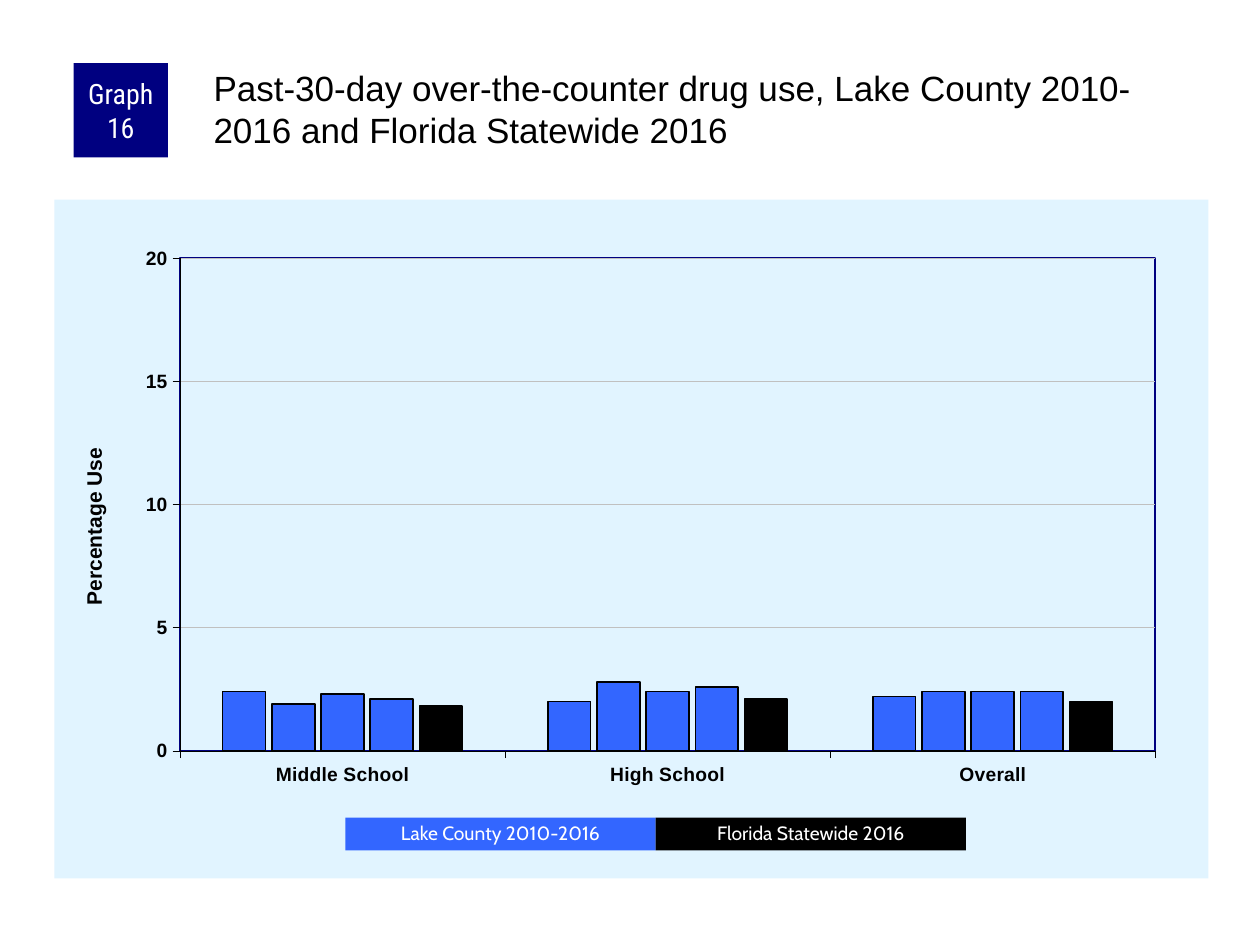
from lxml import etree
from pptx import Presentation
from pptx.chart.data import CategoryChartData
from pptx.dml.color import RGBColor
from pptx.enum.chart import XL_CHART_TYPE, XL_TICK_MARK
from pptx.enum.shapes import MSO_SHAPE
from pptx.enum.text import MSO_ANCHOR, MSO_AUTO_SIZE, PP_ALIGN
from pptx.oxml import parse_xml
from pptx.oxml.ns import nsdecls, qn
from pptx.util import Pt

COLUMNS = XL_CHART_TYPE.COLUMN_CLUSTERED
TICK_OUT, TICK_NONE = XL_TICK_MARK.OUTSIDE, XL_TICK_MARK.NONE
RECTANGLE = MSO_SHAPE.RECTANGLE
TOP, MIDDLE = MSO_ANCHOR.TOP, MSO_ANCHOR.MIDDLE
LEFT, CENTER = PP_ALIGN.LEFT, PP_ALIGN.CENTER
NO_AUTOFIT = MSO_AUTO_SIZE.NONE

BLACK, WHITE, NAVY, BLUE = "000000", "FFFFFF", "000080", "3366FF"
PALE_BLUE, GRAY = "E1F4FF", "C0C0C0"

CATEGORIES = ["Middle School", "High School", "Overall"]
# Name, values, colour, outline width
SERIES = [
    ("Series 1", (2.4, 2, 2.2), BLUE, 0.75),
    ("Series 2", (1.9, 2.8, 2.4), BLUE, 1),
    ("Series 3", (2.3, 2.4, 2.4), BLUE, 1),
    ("Series 4", (2.1, 2.6, 2.4), BLUE, 1),
    ("Series 5", (1.8, 2.1, 2), BLACK, 1),
]
LEGEND = [("Lake County 2010-2016", BLUE), ("Florida Statewide 2016", BLACK)]


def color(hex_value):
    return RGBColor.from_string(hex_value)


def style_font(font, name, size, hex_value, bold=False):
    font.name, font.size, font.bold = name, Pt(size), bold
    font.color.rgb = color(hex_value)


def style_line(line, hex_value, width):
    line.color.rgb = color(hex_value)
    line.width = Pt(width)


def write_text(frame, text, font_name, size, hex_value, alignment, anchor, margins):
    frame.word_wrap = True
    frame.auto_size = NO_AUTOFIT
    frame.vertical_anchor = anchor
    (frame.margin_left, frame.margin_top,
     frame.margin_right, frame.margin_bottom) = map(Pt, margins)
    paragraph = frame.paragraphs[0]
    paragraph.alignment = alignment
    run = paragraph.add_run()
    run.text = text
    style_font(run.font, font_name, size, hex_value)
    return paragraph


def add_box(slide, bounds, fill, text, font_name, size, margins):
    shape = slide.shapes.add_shape(RECTANGLE, *map(Pt, bounds))
    shape.shadow.inherit = False
    shape.fill.solid()
    shape.fill.fore_color.rgb = color(fill)
    shape.line.fill.background()
    return write_text(shape.text_frame, text, font_name, size, WHITE,
                      CENTER, MIDDLE, margins)


def set_layout(element, **settings):
    """Place a chart part by fractions of the chart area."""
    layout = element.find(qn("c:layout"))
    if layout is None:
        layout = etree.Element(qn("c:layout"))
        element.insert(0, layout)
    manual = etree.SubElement(layout, qn("c:manualLayout"))
    for tag, value in settings.items():
        etree.SubElement(manual, qn(f"c:{tag}")).set("val", str(value))


def area_properties(fill, line):
    return parse_xml(f"<c:spPr {nsdecls('c', 'a')}>{fill}{line}</c:spPr>")


def solid_fill(hex_value):
    return f'<a:solidFill><a:srgbClr val="{hex_value}"/></a:solidFill>'


def style_axis(axis):
    axis.major_tick_mark, axis.minor_tick_mark = TICK_OUT, TICK_NONE
    style_font(axis.tick_labels.font, "Arial", 11, BLACK, True)
    style_line(axis.format.line, BLACK, 0.25)


def style_value_axis(axis):
    style_axis(axis)
    axis.minimum_scale, axis.maximum_scale, axis.major_unit = 0, 20, 5
    axis.tick_labels.number_format = "0"
    axis.tick_labels.number_format_is_linked = False
    axis.has_major_gridlines = True
    style_line(axis.major_gridlines.format.line, GRAY, 0.25)
    title = axis.axis_title
    run = title.text_frame.paragraphs[0].add_run()
    run.text = "Percentage Use"
    style_font(run.font, "Arial", 12, BLACK, True)
    title_element = axis._element.find(qn("c:title"))
    set_layout(title_element, xMode="edge", yMode="edge", x=0.02, y=0.36)


def add_usage_chart(slide, bounds):
    data = CategoryChartData()
    data.categories = CATEGORIES
    for name, values, _, _ in SERIES:
        data.add_series(name, values)
    chart = slide.shapes.add_chart(COLUMNS, *map(Pt, bounds), data).chart
    chart.has_legend = chart.has_title = False
    style_font(chart.font, "Arial", 8, BLACK)

    # Columns
    plot = chart.plots[0]
    plot.gap_width, plot.overlap, plot.vary_by_categories = 200, -15, False
    for series, (_, _, fill, width) in zip(plot.series, SERIES):
        series.invert_if_negative = False
        series.format.fill.solid()
        series.format.fill.fore_color.rgb = color(fill)
        style_line(series.format.line, BLACK, width)

    style_axis(chart.category_axis)
    style_value_axis(chart.value_axis)

    # Chart background and plot frame
    no_line = "<a:ln><a:noFill/></a:ln>"
    frame_line = f'<a:ln w="{Pt(1)}">{solid_fill(NAVY)}</a:ln>'
    chart_element = chart._chartSpace.find(qn("c:chart"))
    chart_element.addnext(area_properties(solid_fill(PALE_BLUE), no_line))
    plot_area = chart_element.find(qn("c:plotArea"))
    plot_area.append(area_properties("<a:noFill/>", frame_line))
    set_layout(plot_area, layoutTarget="inner", xMode="edge", yMode="edge",
               x=0.109, y=0.086, w=0.845, h=0.726)


def add_title(slide, bounds, text):
    title = slide.shapes.title
    title.left, title.top, title.width, title.height = map(Pt, bounds)
    write_text(title.text_frame, text, "Arial", 20, BLACK, LEFT, TOP, (2, 2, 0, 0))


def add_legend(slide, left, top, width, height):
    for index, (text, fill) in enumerate(LEGEND):
        bounds = (left + index * width, top, width, height)
        paragraph = add_box(slide, bounds, fill, text, "Cabin", 11,
                            (7.2, 3.6, 7.2, 3.6))
        paragraph.line_spacing = 0.9


def main():
    presentation = Presentation()
    presentation.slide_width, presentation.slide_height = Pt(720), Pt(540)
    slide = presentation.slides.add_slide(presentation.slide_layouts[5])

    add_usage_chart(slide, (31, 114, 659.5, 388))
    add_box(slide, (42, 36, 54, 54), NAVY, "Graph 16", "Roboto Condensed", 16,
            (3.6, 0, 3.6, 0))
    add_title(slide, (120, 36, 570, 60),
              "Past-30-day over-the-counter drug use, Lake County 2010-2016 "
              "and Florida Statewide 2016")
    add_legend(slide, 197.4, 467.3, 177.3, 18.7)

    presentation.save("out.pptx")


if __name__ == "__main__":
    main()
